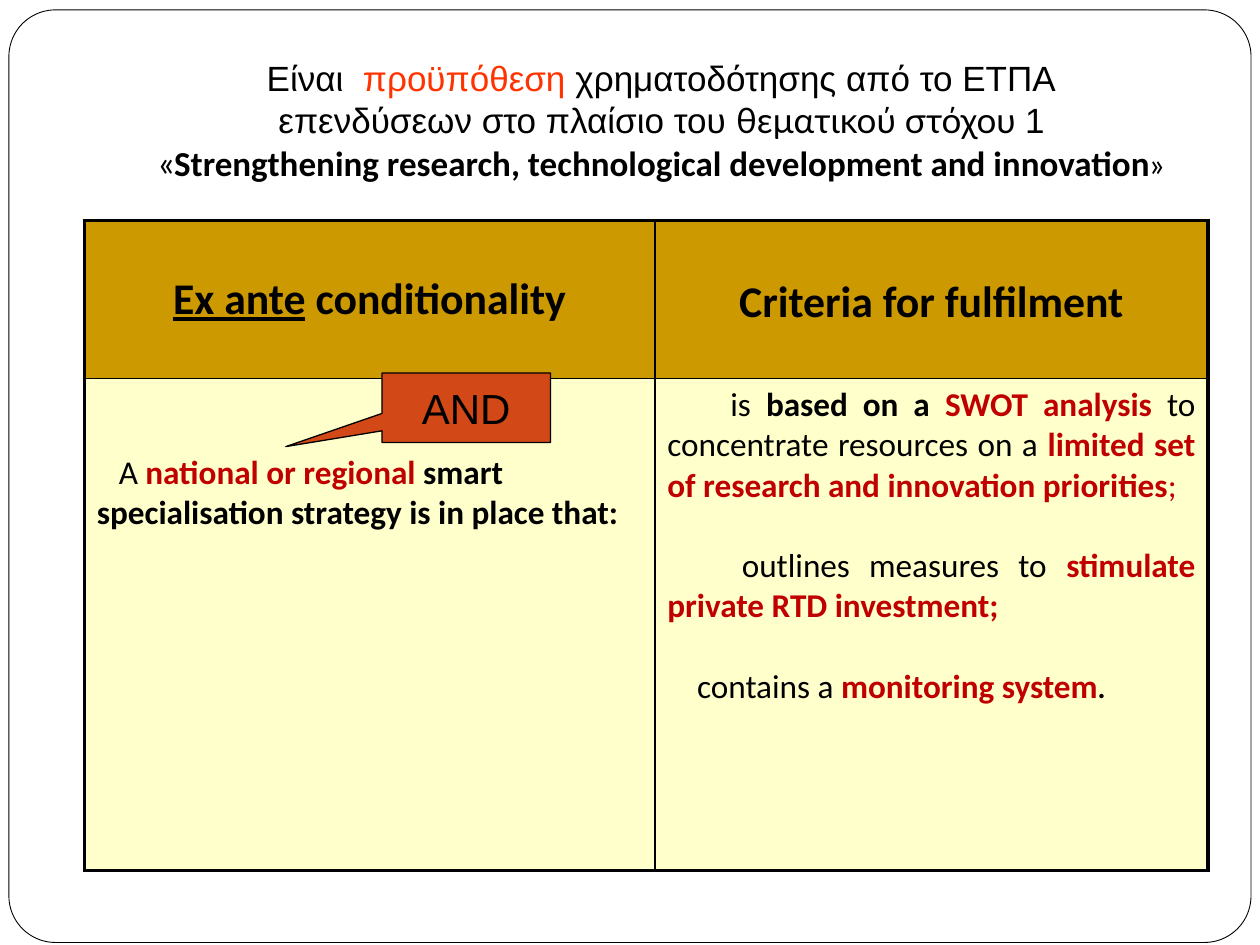
"""Build the slide on the ex ante conditionality for thematic objective 1."""
from typing import NamedTuple

from lxml.etree import SubElement as Sub
from pptx import Presentation
from pptx.dml.color import RGBColor
from pptx.enum.shapes import MSO_SHAPE as Kind
from pptx.enum.text import MSO_ANCHOR as Anchor, MSO_AUTO_SIZE as Auto, PP_ALIGN as Align
from pptx.oxml.ns import qn
from pptx.util import Cm, Pt

BLACK = RGBColor(0x00, 0x00, 0x00)
WHITE = RGBColor(0xFF, 0xFF, 0xFF)
ORANGE = RGBColor(0xFF, 0x33, 0x00)
RED = RGBColor(0xC0, 0x00, 0x00)
GOLD = RGBColor(0xCC, 0x99, 0x00)
CREAM = RGBColor(0xFF, 0xFF, 0xCC)
RUST = RGBColor(0xD3, 0x48, 0x17)
THICK, THIN = 2.25, 1


class Run(NamedTuple):
    text: str
    color: RGBColor = BLACK
    bold: bool = False
    font: str = "Calibri"
    size: float = 19
    under: bool = False


class Para(NamedTuple):
    runs: list[Run]
    align: Align = Align.LEFT
    indent: float = 0
    gap: float = 0


class Entry(NamedTuple):
    row: int
    col: int
    fill: RGBColor
    anchor: Anchor
    top: float
    paras: list[Para]


TITLE = [
    [Run("Είναι ", font="Arial", size=20), Run(" προϋπόθεση", ORANGE, font="Arial", size=20),
     Run(" χρηματοδότησης από το ΕΤΠΑ", font="Arial", size=20)],
    [Run("επενδύσεων στο πλαίσιο του ", font="Arial", size=20),
     Run("θεματικού στόχου ", font="Lato", size=20), Run("1", font="Arial", size=20)],
    [Run("«", font="Lato", size=20),
     Run("Strengthening research, technological development and innovation", bold=True, size=20),
     Run("»", font="Lato", size=18)],
]
ENTRIES = [
    Entry(0, 0, GOLD, Anchor.MIDDLE, 0.13, [Para([
        Run("Ex ante", bold=True, size=25, under=True),
        Run(" conditionality", bold=True, size=25)], Align.CENTER)]),
    Entry(0, 1, GOLD, Anchor.MIDDLE, 0.25, [Para([
        Run("Criteria for fulfilment", bold=True, size=25)], Align.CENTER)]),
    Entry(1, 0, CREAM, Anchor.TOP, 1.5, [Para([
        Run("A "), Run("national or regional ", RED, True),
        Run("smart specialisation strategy is in place that:", bold=True)], indent=0.44)]),
    Entry(1, 1, CREAM, Anchor.TOP, 0.13, [
        Para([Run("is "), Run("based on a ", bold=True), Run("SWOT analysis ", RED, True),
              Run("to concentrate resources on a "),
              Run("limited set of research and innovation priorities", RED, True),
              Run(";", RED)], Align.JUSTIFY, 1.27),
        Para([Run("outlines measures to "),
              Run("stimulate private RTD investment;", RED, True)], Align.JUSTIFY, 1.5, 23),
        Para([Run("contains a "), Run("monitoring system", RED, True),
              Run(".", bold=True, size=17)], Align.JUSTIFY, 0.6, 23)]),
]


def write(para, text: str, *, color: RGBColor, bold: bool, font: str, size: float, under: bool) -> None:
    """Add one formatted run to a paragraph."""
    run = para.add_run()
    run.text = text
    face = run.font
    face.name, face.size, face.bold, face.underline = font, Pt(size), bold, under
    face.color.rgb = color


def fill_para(para, runs: list[Run]) -> None:
    """Write a list of runs into a paragraph."""
    for run in runs:
        style = run._asdict()
        write(para, style.pop("text"), **style)


def draw_shape(slide, kind: Kind, box: tuple, fill: RGBColor, line: float, adjust: tuple):
    """Draw a filled, outlined preset shape."""
    shape = slide.shapes.add_shape(kind, *map(Cm, box))
    shape.shadow.inherit = False
    shape.fill.solid()
    shape.fill.fore_color.rgb = fill
    shape.line.color.rgb = BLACK
    shape.line.width = Pt(line)
    for i, value in enumerate(adjust):
        shape.adjustments[i] = value
    return shape


def draw_edge(cell, side: str, width: float) -> None:
    """Add a solid black border to one side of a cell."""
    edge = Sub(cell._tc.get_or_add_tcPr(), qn(f"a:ln{side}"), w=str(Pt(width)))
    Sub(Sub(edge, qn("a:solidFill")), qn("a:srgbClr"), val=str(BLACK))


def draw_cell(table, entry: Entry) -> None:
    """Format one table cell and write its paragraphs."""
    cell = table.cell(entry.row, entry.col)
    outer = {"L": entry.col == 0, "R": entry.col == 1, "T": entry.row == 0, "B": entry.row == 1}
    for side, is_rim in outer.items():
        draw_edge(cell, side, THICK if is_rim else THIN)
    cell.fill.solid()
    cell.fill.fore_color.rgb = entry.fill
    cell.vertical_anchor = entry.anchor
    cell.margin_top = Cm(entry.top)
    frame = cell.text_frame
    for i, item in enumerate(entry.paras):
        para = frame.add_paragraph() if i else frame.paragraphs[0]
        para.alignment = item.align
        para.space_before = Pt(item.gap)
        para._p.get_or_add_pPr().set("indent", str(Cm(item.indent)))
        fill_para(para, item.runs)


def draw_title(title) -> None:
    """Place the title and write its three lines."""
    title.left, title.top, title.width, title.height = map(Cm, (2.54, 0.76, 21.59, 3.18))
    frame = title.text_frame
    frame.auto_size = Auto.NONE
    frame.vertical_anchor = Anchor.BOTTOM
    frame.margin_bottom = Cm(0.25)
    para = frame.paragraphs[0]
    para.alignment = Align.CENTER
    for i, line in enumerate(TITLE):
        if i:
            para.add_line_break()
        fill_para(para, line)


def main() -> None:
    """Build and save the deck."""
    deck = Presentation()
    deck.slide_width, deck.slide_height = Cm(25.4), Cm(19.05)
    slide = deck.slides.add_slide(deck.slide_layouts[5])
    border = draw_shape(slide, Kind.ROUNDED_RECTANGLE, (0.18, 0.2, 25.04, 18.8), WHITE, 0.5, (0.05,))
    slide.shapes.title._element.addprevious(border._element)
    draw_title(slide.shapes.title)

    table = slide.shapes.add_table(2, 2, *map(Cm, (1.7, 4.45, 22.65, 13.1))).table
    table.first_row = table.horz_banding = False
    for col, width in zip(table.columns, (11.5, 11.15)):
        col.width = Cm(width)
    for row, height in zip(table.rows, (3.18, 9.92)):
        row.height = Cm(height)
    for entry in ENTRIES:
        draw_cell(table, entry)

    call = draw_shape(slide, Kind.RECTANGULAR_CALLOUT, (7.7, 7.52, 3.4, 1.4), RUST, 0.75, (-1.07, 0.56))
    call.text_frame.vertical_anchor = Anchor.MIDDLE
    para = call.text_frame.paragraphs[0]
    para.alignment = Align.CENTER
    fill_para(para, [Run("ΑΝD", font="Arial", size=24)])
    deck.save("out.pptx")


if __name__ == "__main__":
    main()
